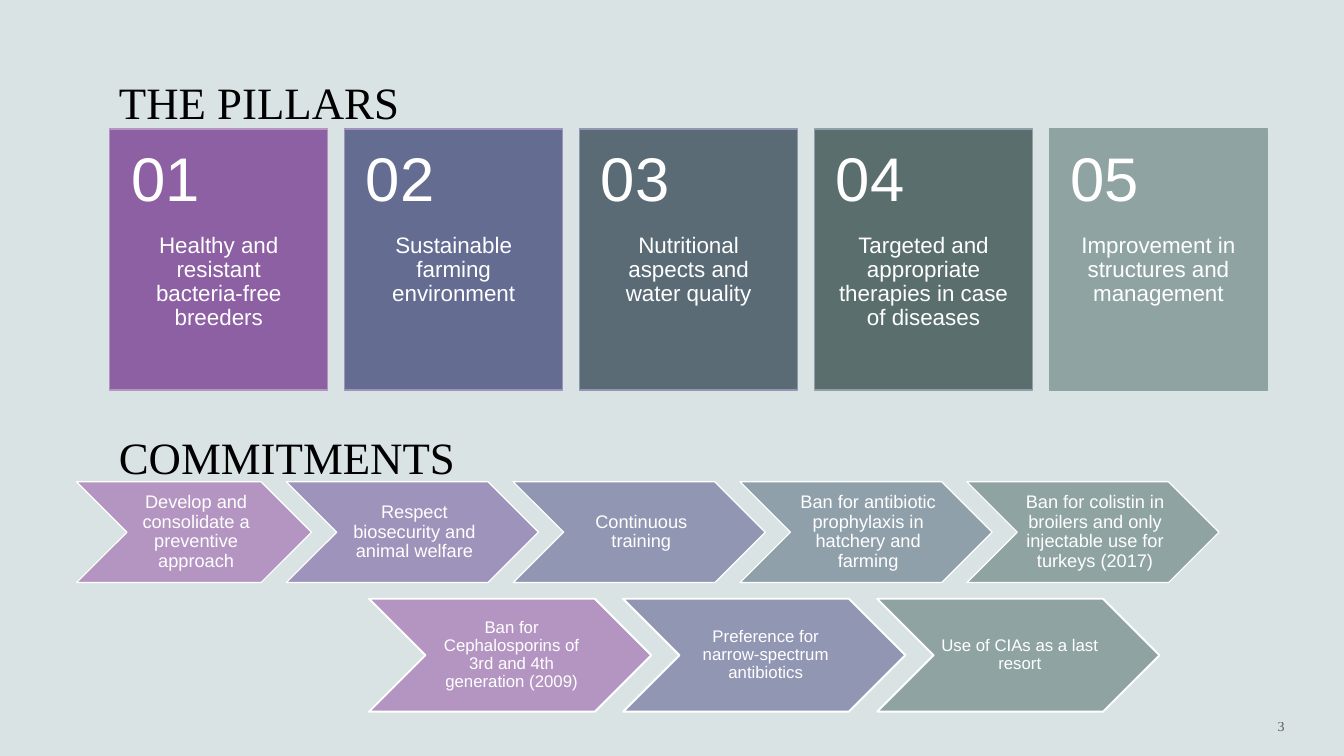
"""Build a slide with five numbered pillars and two chevron rows of commitments."""
import pptx
import pptx.util
import pptx.dml.color
import pptx.enum.shapes
import pptx.enum.text
import pptx.oxml
import pptx.oxml.ns

Inches = pptx.util.Inches
SHAPE = pptx.enum.shapes.MSO_SHAPE
ALIGN = pptx.enum.text.PP_ALIGN
ANCHOR = pptx.enum.text.MSO_ANCHOR

COLORS = {
    "background": "DAE3E3", "white": "FFFFFF", "black": "000000",
    "purple": "8D5FA3", "indigo": "646C92", "slate": "5A6B76", "pine": "5A6E6E",
    "sage": "8FA3A3", "mauve": "B495C2", "lavender": "9E93BB",
    "periwinkle": "9197B3", "steel": "90A0AB",
}
PILLARS = [
    ("Healthy and resistant bacteria-free breeders", "purple", "mauve"),
    ("Sustainable farming environment", "indigo", "lavender"),
    ("Nutritional aspects and water quality", "slate", "periwinkle"),
    ("Targeted and appropriate therapies in case of diseases", "pine", "steel"),
    ("Improvement in structures and management", "sage", "sage"),
]
COMMITMENT_ROWS = [
    {"left": 0.76, "top": 4.78, "height": 1, "size": 13, "line": 0.85, "inset": 0.06,
     "steps": [
         ("Develop and consolidate a preventive approach", "mauve", 2.33),
         ("Respect biosecurity and animal welfare", "lavender", 2.5),
         ("Continuous training", "periwinkle", 2.5),
         ("Ban for antibiotic prophylaxis in hatchery and farming", "steel", 2.5),
         ("Ban for colistin in broilers and only injectable use for turkeys (2017)",
          "sage", 2.5),
     ]},
    {"left": 3.66, "top": 5.94, "height": 1.12, "size": 12, "line": 1.35, "inset": 0.05,
     "steps": [
         ("Ban for Cephalosporins of 3rd and 4th generation (2009)", "mauve", 2.8),
         ("Preference for narrow-spectrum antibiotics", "periwinkle", 2.8),
         ("Use of CIAs as a last resort", "sage", 2.8),
     ]},
]
PILLAR = {"left": 1.09, "top": 1.28, "width": 2.16, "height": 2.59, "pitch": 2.33}
NUMBER_HEIGHT = 1.04
HEADING = {"size": 32, "color": "black", "font": "Times New Roman", "anchor": ANCHOR.BOTTOM}


def rgb(name):
    return pptx.dml.color.RGBColor.from_string(COLORS[name])


def write(shape, text, size, color="white", font="Arial", align=ALIGN.LEFT,
          anchor=ANCHOR.MIDDLE, insets=(0.1, 0.05, 0.1, 0.05), spacing=None):
    frame = shape.text_frame
    left, top, right, bottom = map(Inches, insets)
    frame_format = {
        "word_wrap": True, "auto_size": pptx.enum.text.MSO_AUTO_SIZE.NONE,
        "vertical_anchor": anchor, "margin_left": left, "margin_top": top,
        "margin_right": right, "margin_bottom": bottom,
    }
    for name, value in frame_format.items():
        setattr(frame, name, value)
    para = frame.paragraphs[0]
    para.alignment = align
    para.line_spacing = spacing
    span = para.add_run()
    span.text = text
    for name, value in {"name": font, "size": pptx.util.Pt(size)}.items():
        setattr(span.font, name, value)
    span.font.color.rgb = rgb(color)
    return span


def add_text(page, place, text, **text_format):
    box = page.shapes.add_textbox(*map(Inches, place))
    return write(box, text, **text_format)


def add_panel(page, kind, place, fill, line, line_width):
    panel = page.shapes.add_shape(kind, *map(Inches, place))
    panel.shadow.inherit = False
    panel.fill.solid()
    panel.fill.fore_color.rgb = rgb(fill)
    panel.line.color.rgb = rgb(line)
    panel.line.width = pptx.util.Pt(line_width)
    return panel


def add_commitments(page, row):
    left, height = row["left"], row["height"]
    for text, fill, width in row["steps"]:
        place = (left, row["top"], width, height)
        chevron = add_panel(page, SHAPE.CHEVRON, place, fill, "white", row["line"])
        write(chevron, text, row["size"], align=ALIGN.CENTER, spacing=0.9,
              insets=(row["inset"], 0.02, 0.02, 0.02))
        left += width - height / 4


def add_pillars(page):
    top, width, height = PILLAR["top"], PILLAR["width"], PILLAR["height"]
    for index, (text, fill, line) in enumerate(PILLARS):
        left = PILLAR["left"] + index * PILLAR["pitch"]
        card = add_panel(page, SHAPE.RECTANGLE, (left, top, width, height), fill, line, 0.85)
        write(card, text, 16, align=ALIGN.CENTER, anchor=ANCHOR.TOP, spacing=0.9,
              insets=(0.21, NUMBER_HEIGHT, 0.21, 0.36))
        add_text(page, (left, top, width, NUMBER_HEIGHT), f"{index + 1:02d}", size=44,
                 spacing=0.9, insets=(0.21, 0.18, 0.21, 0.18))


def add_page_number(page):
    span = add_text(page, (10.92, 6.95, 1.92, 0.5), "3", size=10, color="black",
                    font="Times New Roman", align=ALIGN.RIGHT)
    properties = span.font._element if hasattr(span.font, "_element") else span._r.get_or_add_rPr()
    properties.set("spc", "200")
    color = properties.find(".//" + pptx.oxml.ns.qn("a:srgbClr"))
    color.append(pptx.oxml.parse_xml(
        f'<a:alpha {pptx.oxml.ns.nsdecls("a")} val="60000"/>'))


def main():
    deck = pptx.Presentation()
    deck.slide_width, deck.slide_height = Inches(13.33), Inches(7.5)
    page = deck.slides.add_slide(deck.slide_layouts.get_by_name("Title Only"))
    page.background.fill.solid()
    page.background.fill.fore_color.rgb = rgb("background")

    for row in COMMITMENT_ROWS:
        add_commitments(page, row)
    add_pillars(page)

    title = page.shapes.title
    title_place = {"left": 1.08, "top": 0.1, "width": 11.17, "height": 1.22}
    for name, value in title_place.items():
        setattr(title, name, Inches(value))
    write(title, "THE PILLARS", **HEADING)
    add_text(page, (1.08, 3.63, 11.17, 1.22), "COMMITMENTS", **HEADING)
    add_page_number(page)
    deck.save("out.pptx")


if __name__ == "__main__":
    main()
